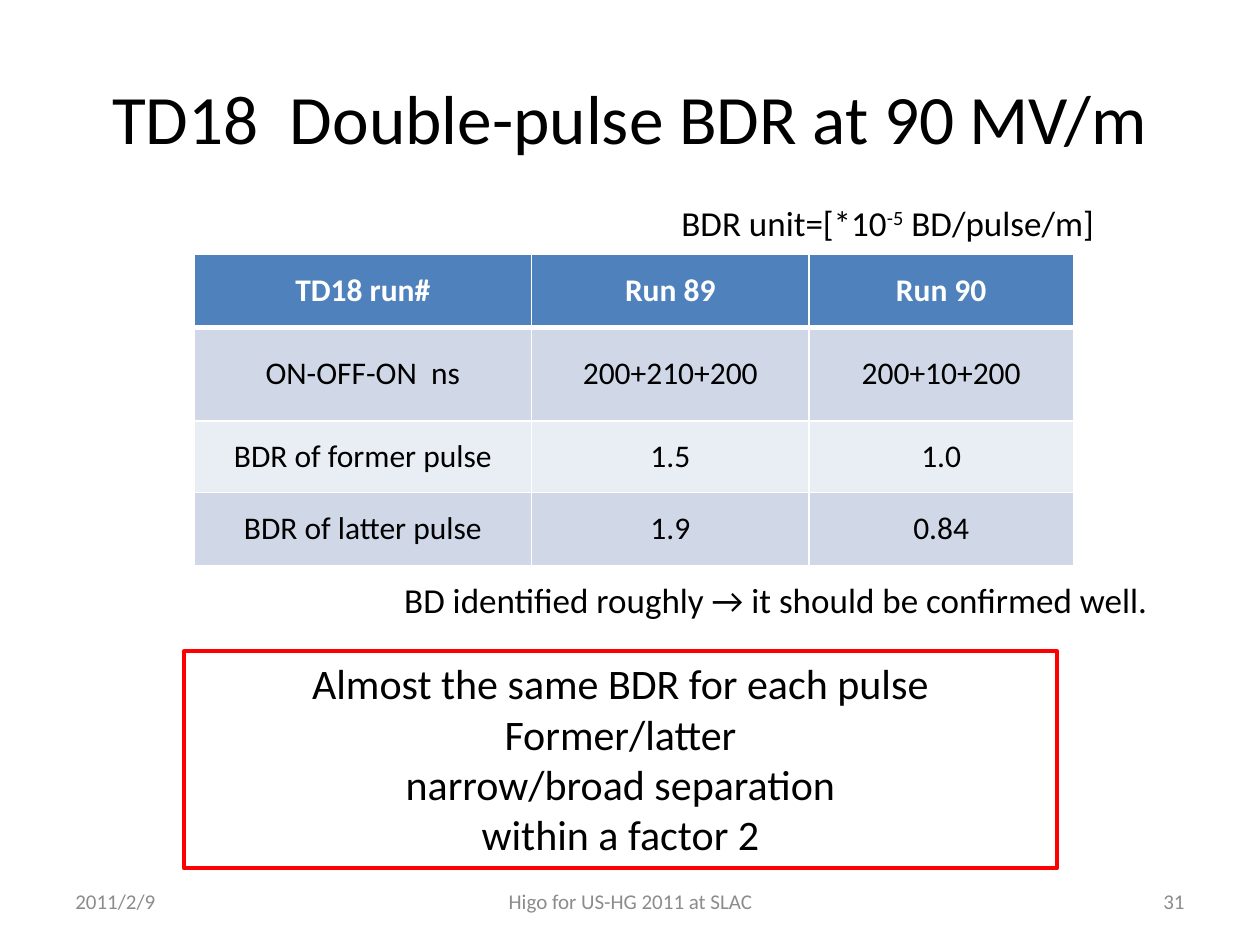
from dataclasses import dataclass

import pptx
import pptx.dml.color
import pptx.enum.shapes
import pptx.enum.text
import pptx.oxml
import pptx.oxml.ns
import pptx.util
from pptx.util import Inches

ALIGN = pptx.enum.text.PP_ALIGN
ANCHOR = pptx.enum.text.MSO_ANCHOR
FONT = "Calibri"
BLACK, WHITE, GREY, RED = "000000", "FFFFFF", "8C8C8C", "FF0000"
HEADER_FILL, BAND_FILLS = "4F81BD", ("E9EDF4", "D0D8E8")


@dataclass
class Label:
    left: float
    top: float
    width: float
    height: float
    runs: list[str]
    size: float = 20
    color: str = BLACK
    align: ALIGN = ALIGN.LEFT
    anchor: ANCHOR = ANCHOR.TOP


LABELS = [
    Label(0.5, 6.95, 2.33, 0.4, ["2011/2/9"], 12, GREY, ALIGN.LEFT, ANCHOR.MIDDLE),
    Label(3.42, 6.95, 3.17, 0.4, ["Higo for US-HG 2011 at SLAC"], 12, GREY,
          ALIGN.CENTER, ANCHOR.MIDDLE),
    Label(7.17, 6.95, 2.33, 0.4, ["31"], 12, GREY, ALIGN.RIGHT, ANCHOR.MIDDLE),
    Label(5.31, 1.55, 3.62, 0.44, ["BDR unit=[*10", "^-5", " BD/pulse/m]"]),
    Label(3.11, 4.54, 6.22, 0.44,
          ["BD identified roughly → it should be confirmed well."]),
]

CONCLUSION = ["Almost the same BDR for each pulse", "Former/latter",
              "narrow/broad separation", "within a factor 2"]

COLUMN_WIDTHS = [2.68, 2.2, 2.1]
ROW_HEIGHTS = [0.58, 0.74, 0.57, 0.58]
BDR_ROWS = [
    ["TD18 run#", "Run 89", "Run 90"],
    ["ON-OFF-ON  ns", "200+210+200", "200+10+200"],
    ["BDR of former pulse", "1.5", "1.0"],
    ["BDR of latter pulse", "1.9", "0.84"],
]


def rgb(color: str) -> pptx.dml.color.RGBColor:
    return pptx.dml.color.RGBColor.from_string(color)


def add_run(paragraph, text: str, size: float, color: str = BLACK, bold: bool = False) -> None:
    """Add one run; a leading ^ makes it superscript."""
    run = paragraph.add_run()
    run.text = text.removeprefix("^")
    run.font.name = FONT
    run.font.size = pptx.util.Pt(size)
    run.font.bold = bold
    run.font.color.rgb = rgb(color)
    if text.startswith("^"):
        run.font._element.set("baseline", "30000")


def add_title(slide, text: str) -> None:
    title = slide.shapes.title
    title.left, title.top = Inches(0.5), Inches(0.3)
    title.width, title.height = Inches(9), Inches(1.25)
    title.text_frame.vertical_anchor = ANCHOR.MIDDLE
    paragraph = title.text_frame.paragraphs[0]
    paragraph.alignment = ALIGN.CENTER
    add_run(paragraph, text, 39.6)


def add_label(slide, label: Label) -> None:
    box = slide.shapes.add_textbox(Inches(label.left), Inches(label.top),
                                   Inches(label.width), Inches(label.height))
    frame = box.text_frame
    frame.word_wrap = True
    frame.vertical_anchor = label.anchor
    paragraph = frame.paragraphs[0]
    paragraph.alignment = label.align
    for text in label.runs:
        add_run(paragraph, text, label.size, label.color)


def add_conclusion(slide, lines: list[str]) -> None:
    shape = slide.shapes.add_shape(pptx.enum.shapes.MSO_SHAPE.RECTANGLE, Inches(1.46),
                                   Inches(5.17), Inches(6.93), Inches(1.72))
    shape.shadow.inherit = False
    shape.fill.background()
    shape.line.color.rgb = rgb(RED)
    shape.line.width = pptx.util.Pt(2.25)
    frame = shape.text_frame
    frame.word_wrap = True
    frame.vertical_anchor = ANCHOR.TOP
    for index, line in enumerate(lines):
        paragraph = frame.add_paragraph() if index else frame.paragraphs[0]
        paragraph.alignment = ALIGN.CENTER
        add_run(paragraph, line, 24)


def set_borders(cell, widths: dict[str, float]) -> None:
    """Draw white borders, widths in points by side (L, R, T, B)."""
    properties = cell._tc.get_or_add_tcPr()
    for side, width in widths.items():
        properties.append(pptx.oxml.parse_xml(
            f'<a:ln{side} {pptx.oxml.ns.nsdecls("a")} w="{pptx.util.Pt(width)}">'
            f'<a:solidFill><a:srgbClr val="{WHITE}"/></a:solidFill></a:ln{side}>'))


def add_bdr_table(slide) -> None:
    frame = slide.shapes.add_table(
        len(BDR_ROWS), len(COLUMN_WIDTHS), Inches(1.54), Inches(2.02),
        Inches(sum(COLUMN_WIDTHS)), Inches(sum(ROW_HEIGHTS)))
    table = frame.table
    for column, width in zip(table.columns, COLUMN_WIDTHS):
        column.width = Inches(width)
    for row_index, (row, height) in enumerate(zip(table.rows, ROW_HEIGHTS)):
        row.height = Inches(height)
        header = row_index == 0
        borders = {"L": 1, "R": 1, "T": 3 if row_index == 1 else 1, "B": 3 if header else 1}
        for cell, text in zip(row.cells, BDR_ROWS[row_index]):
            set_borders(cell, borders)
            cell.fill.solid()
            cell.fill.fore_color.rgb = rgb(HEADER_FILL if header else BAND_FILLS[row_index % 2])
            cell.vertical_anchor = ANCHOR.MIDDLE
            paragraph = cell.text_frame.paragraphs[0]
            paragraph.alignment = ALIGN.CENTER
            add_run(paragraph, text, 18, WHITE if header else BLACK, header)


def main() -> None:
    presentation = pptx.Presentation()
    presentation.slide_width = Inches(10)
    presentation.slide_height = Inches(7.5)
    slide = presentation.slides.add_slide(presentation.slide_layouts.get_by_name("Title Only"))
    add_title(slide, "TD18  Double-pulse BDR at 90 MV/m")
    add_conclusion(slide, CONCLUSION)
    add_bdr_table(slide)
    for label in LABELS:
        add_label(slide, label)
    presentation.save("out.pptx")


if __name__ == "__main__":
    main()
